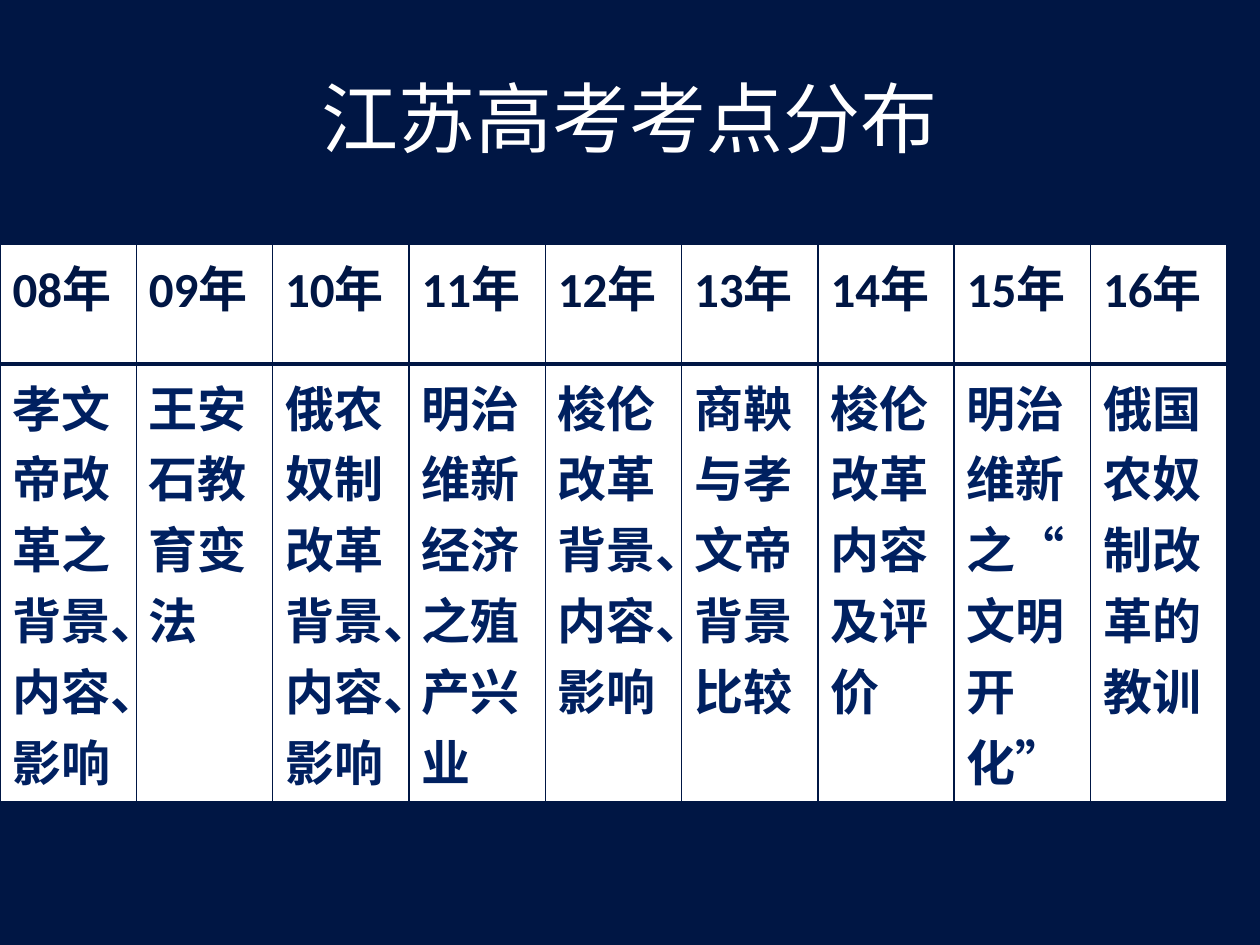
from lxml.etree import SubElement
from pptx import Presentation
from pptx.dml.color import RGBColor
from pptx.enum.text import MSO_ANCHOR, PP_ALIGN
from pptx.oxml.ns import qn
from pptx.util import Inches, Pt

NAVY, BLUE, WHITE = "001644", "002060", "FFFFFF"
TOPICS = {
    "08年": "孝文帝改革之背景、内容、影响",
    "09年": "王安石教育变法",
    "10年": "俄农奴制改革背景、内容、影响",
    "11年": "明治维新经济之殖产兴业",
    "12年": "梭伦改革背景、内容、影响",
    "13年": "商鞅与孝文帝背景比较",
    "14年": "梭伦改革内容及评价",
    "15年": "明治维新之“文明开化”",
    "16年": "俄国农奴制改革的教训",
}


def paint(fill, color):
    fill.solid()
    fill.fore_color.rgb = RGBColor.from_string(color)


def style(para, size, color, bold=False):
    for run in para.runs:
        font = run.font
        font.name, font.size, font.bold = "Calibri", Pt(size), bold
        font.color.rgb = RGBColor.from_string(color)


def border(cell, widths):
    """Draw the left, right, top and bottom edges, widths in points."""
    props = cell._tc.get_or_add_tcPr()
    for place, (side, width) in enumerate(zip("LRTB", widths)):
        line = SubElement(props, qn(f"a:ln{side}"), w=str(Pt(width)))
        fill = SubElement(line, qn("a:solidFill"))
        SubElement(fill, qn("a:srgbClr"), val=NAVY)
        props.insert(place, line)


def add_title(slide, box, text):
    frame = slide.shapes.add_textbox(*box).text_frame
    frame.word_wrap = True
    frame.vertical_anchor = MSO_ANCHOR.MIDDLE
    frame.text = text
    para = frame.paragraphs[0]
    para.alignment = PP_ALIGN.CENTER
    style(para, 44, WHITE)


def add_grid(slide, box, heights):
    table = slide.shapes.add_table(2, len(TOPICS), *box).table
    for row, height in zip(table.rows, heights):
        row.height = height
    rows = ((TOPICS.keys(), NAVY, (1, 1, 1, 3)),
            (TOPICS.values(), BLUE, (1, 1, 3, 1)))
    for r, (texts, color, widths) in enumerate(rows):
        for c, text in enumerate(texts):
            cell = table.cell(r, c)
            cell.text = text
            paint(cell.fill, WHITE)
            border(cell, widths)
            style(cell.text_frame.paragraphs[0], 28, color, bold=True)


def main():
    deck = Presentation()
    deck.slide_width, deck.slide_height = Inches(10), Inches(7.5)
    slide = deck.slides.add_slide(deck.slide_layouts[6])
    paint(slide.background.fill, NAVY)
    heights = Inches(0.95), Inches(3.42)
    add_grid(slide, (0, Inches(1.94), Inches(9.74), sum(heights)), heights)
    add_title(slide, [Inches(n) for n in (0.5, 0.3, 9, 1.25)], "江苏高考考点分布")
    deck.save("out.pptx")


if __name__ == "__main__":
    main()
